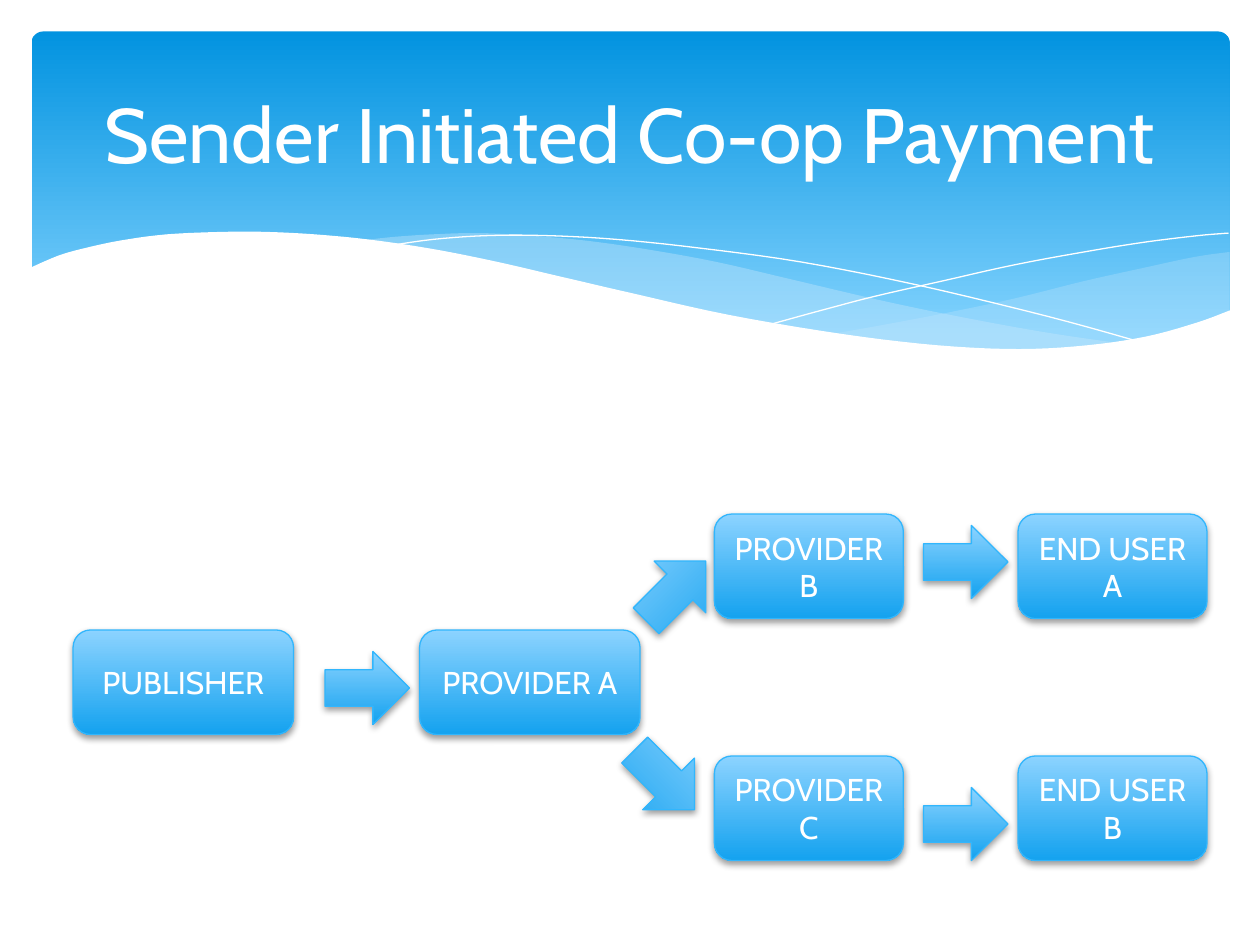
import pptx
import pptx.dml.color
import pptx.enum.shapes
import pptx.enum.text
import pptx.oxml
import pptx.oxml.ns
import pptx.util

Inches = pptx.util.Inches
Pt = pptx.util.Pt
qn = pptx.oxml.ns.qn
SHAPE = pptx.enum.shapes.MSO_SHAPE

BOX_HEIGHT = 0.83
ARROW_WIDTH, ARROW_HEIGHT = 0.67, 0.58
WIDE, NARROW = 1.75, 1.5
MIDDLE, UPPER, LOWER = 5, 4.08, 6

BOXES = [
    (["PUBLISHER"], 0.58, MIDDLE, WIDE),
    (["PROVIDER A"], 3.33, MIDDLE, WIDE),
    (["PROVIDER", "B"], 5.67, UPPER, NARROW),
    (["PROVIDER", "C"], 5.67, LOWER, NARROW),
    (["END USER", "A"], 8.08, UPPER, NARROW),
    (["END USER", "B"], 8.08, LOWER, NARROW),
]
ARROWS = [
    (2.58, 5.17, 0),
    (7.33, 6.25, 0),
    (7.33, 4.17, 0),
    (5.03, 4.4, 315),
    (4.94, 5.9, 45),
]

RIGHT_SWELL_TOP = [(9.76, 2), (9.48, 2.04), (9.06, 2.13), (8.61, 2.23), (8.05, 2.37),
                   (7.53, 2.48), (7.06, 2.57), (6.61, 2.65)]
RIGHT_SWELL_BASE = [(6.61, 2.65), (7.05, 2.71), (7.57, 2.76), (8.03, 2.78), (8.44, 2.77),
                    (8.81, 2.73), (9.21, 2.65), (9.49, 2.57), (9.76, 2.47)]
LONG_SWELL_TOP = [(8.93, 2.73), (8.37, 2.65), (7.75, 2.54), (7.06, 2.4), (6.29, 2.22),
                  (5.69, 2.08), (5.14, 1.98), (4.65, 1.91), (4.2, 1.87), (3.8, 1.85),
                  (3.44, 1.86), (3.13, 1.88), (2.86, 1.91)]
LONG_SWELL_BASE = [(2.86, 1.91), (3.42, 1.99), (4.04, 2.11), (4.49, 2.22), (5.3, 2.4),
                   (6.01, 2.55), (6.65, 2.66), (7.22, 2.74), (7.73, 2.77), (8.18, 2.78),
                   (8.57, 2.77), (8.93, 2.73)]
FALLING_LINE = [(3.09, 1.95), (3.44, 1.9), (3.87, 1.87), (4.33, 1.87), (4.89, 1.9),
                (5.56, 1.97), (6.36, 2.08), (7.27, 2.26), (8.31, 2.51), (9.07, 2.72)]
RISING_LINE = [(6.13, 2.57), (6.53, 2.46), (6.95, 2.35), (7.48, 2.23), (8.06, 2.1),
               (8.66, 1.99), (9.1, 1.92), (9.51, 1.87), (9.75, 1.85)]
WHITE_WAVE = [(9.77, 2.46), (9.5, 2.56), (9.1, 2.67), (8.63, 2.74), (8.09, 2.77),
              (7.44, 2.74), (6.68, 2.65), (5.79, 2.5), (5.03, 2.33), (4.47, 2.2),
              (3.91, 2.07), (3.4, 1.97), (2.92, 1.9), (2.5, 1.86), (2.11, 1.84),
              (1.77, 1.84), (1.32, 1.86), (0.95, 1.91), (0.67, 1.97), (0.46, 2.03),
              (0.23, 2.13)]


def color(value):
    return pptx.dml.color.RGBColor.from_string(value)


def smooth(knots, steps=5):
    padded = [knots[0], *knots, knots[-1]]
    points = [knots[0]]
    for a, b, c, d in zip(padded, padded[1:], padded[2:], padded[3:]):
        for step in range(1, steps + 1):
            t = step / steps
            points.append(tuple(
                (2 * q + (r - p) * t + (2 * p - 5 * q + 4 * r - s) * t ** 2
                 + (3 * q - p - 3 * r + s) * t ** 3) / 2
                for p, q, r, s in zip(a, b, c, d)))
    return points


def fill_gradient(shape, stops):
    shape.fill.gradient()
    shape.fill.gradient_angle = 270
    for stop, (position, value) in zip(shape.fill.gradient_stops, stops):
        stop.position = position
        stop.color.rgb = color(value)


def add_outline(page, points, closed):
    corners = [(Inches(x), Inches(y)) for x, y in points]
    builder = page.shapes.build_freeform(*corners[0], scale=1.0)
    builder.add_line_segments(corners[1:], close=closed)
    shape = builder.convert_to_shape()
    shape.shadow.inherit = False
    return shape


def add_area(page, points, value, opacity=100):
    area = add_outline(page, points, True)
    area.fill.solid()
    area.fill.fore_color.rgb = color(value)
    area.line.fill.background()
    if opacity < 100:
        tone = area._element.spPr.find(qn("a:solidFill")).find(qn("a:srgbClr"))
        alpha = pptx.oxml.parse_xml(
            f'<a:alpha {pptx.oxml.ns.nsdecls("a")} val="{opacity * 1000}"/>')
        tone.append(alpha)


def add_curve(page, knots):
    curve = add_outline(page, smooth(knots), False)
    curve.fill.background()
    curve.line.color.rgb = color("FFFFFF")
    curve.line.width = Pt(0)


def add_header(page):
    band = page.shapes.add_shape(
        SHAPE.ROUNDED_RECTANGLE, Inches(0.25), Inches(0.25), Inches(9.51), Inches(2.7))
    band.adjustments[0] = 0.034
    band.shadow.inherit = False
    fill_gradient(band, [(0, "0293E0"), (0.9, "83D3FE")])
    band.line.fill.background()
    add_area(page, smooth(RIGHT_SWELL_TOP) + smooth(RIGHT_SWELL_BASE), "C6E7FC", 29)
    add_area(page, smooth(LONG_SWELL_TOP) + smooth(LONG_SWELL_BASE), "C6E7FC", 40)
    add_curve(page, FALLING_LINE)
    add_curve(page, RISING_LINE)
    add_area(page, smooth(WHITE_WAVE) + [(0.23, 3.29), (9.77, 3.29)], "FFFFFF")


def write_lines(frame, lines, size):
    frame.word_wrap = True
    frame.vertical_anchor = pptx.enum.text.MSO_ANCHOR.MIDDLE
    for index, line in enumerate(lines):
        para = frame.add_paragraph() if index else frame.paragraphs[0]
        para.alignment = pptx.enum.text.PP_ALIGN.CENTER
        span = para.add_run()
        span.text = line
        span.font.name = "Cabin"
        span.font.size = Pt(size)
        span.font.color.rgb = color("FFFFFF")


def add_title(page, text):
    title = page.shapes.title
    title.left, title.top = Inches(0.5), Inches(0.37)
    title.width, title.height = Inches(9), Inches(1.37)
    write_lines(title.text_frame, [text], 44)
    page.shapes.element.append(title.element)


def add_glossy(page, kind, left, top, width, height):
    shape = page.shapes.add_shape(
        kind, Inches(left), Inches(top), Inches(width), Inches(height))
    fill_gradient(shape, [(0, "8CD3FF"), (1, "14A2EF")])
    shape.line.color.rgb = color("31B6FD")
    shape.line.width = Pt(0.75)
    shape.shadow.inherit = False
    shadow = pptx.oxml.parse_xml(
        f'<a:outerShdw {pptx.oxml.ns.nsdecls("a")} blurRad="{Pt(4)}" dist="{Pt(2)}" '
        'dir="5400000" rotWithShape="0"><a:srgbClr val="000000">'
        '<a:alpha val="38000"/></a:srgbClr></a:outerShdw>')
    shape._element.spPr.find(qn("a:effectLst")).append(shadow)
    return shape


def add_box(page, lines, left, top, width):
    box = add_glossy(page, SHAPE.ROUNDED_RECTANGLE, left, top, width, BOX_HEIGHT)
    write_lines(box.text_frame, lines, 18)


def add_arrow(page, left, top, rotation):
    arrow = add_glossy(page, SHAPE.RIGHT_ARROW, left, top, ARROW_WIDTH, ARROW_HEIGHT)
    arrow.rotation = rotation


def main():
    deck = pptx.Presentation()
    deck.slide_width, deck.slide_height = Inches(10), Inches(7.5)
    page = deck.slides.add_slide(deck.slide_layouts[5])
    add_header(page)
    add_title(page, "Sender Initiated Co-op Payment")
    for box in BOXES:
        add_box(page, *box)
    for arrow in ARROWS:
        add_arrow(page, *arrow)
    deck.save("out.pptx")


if __name__ == "__main__":
    main()
